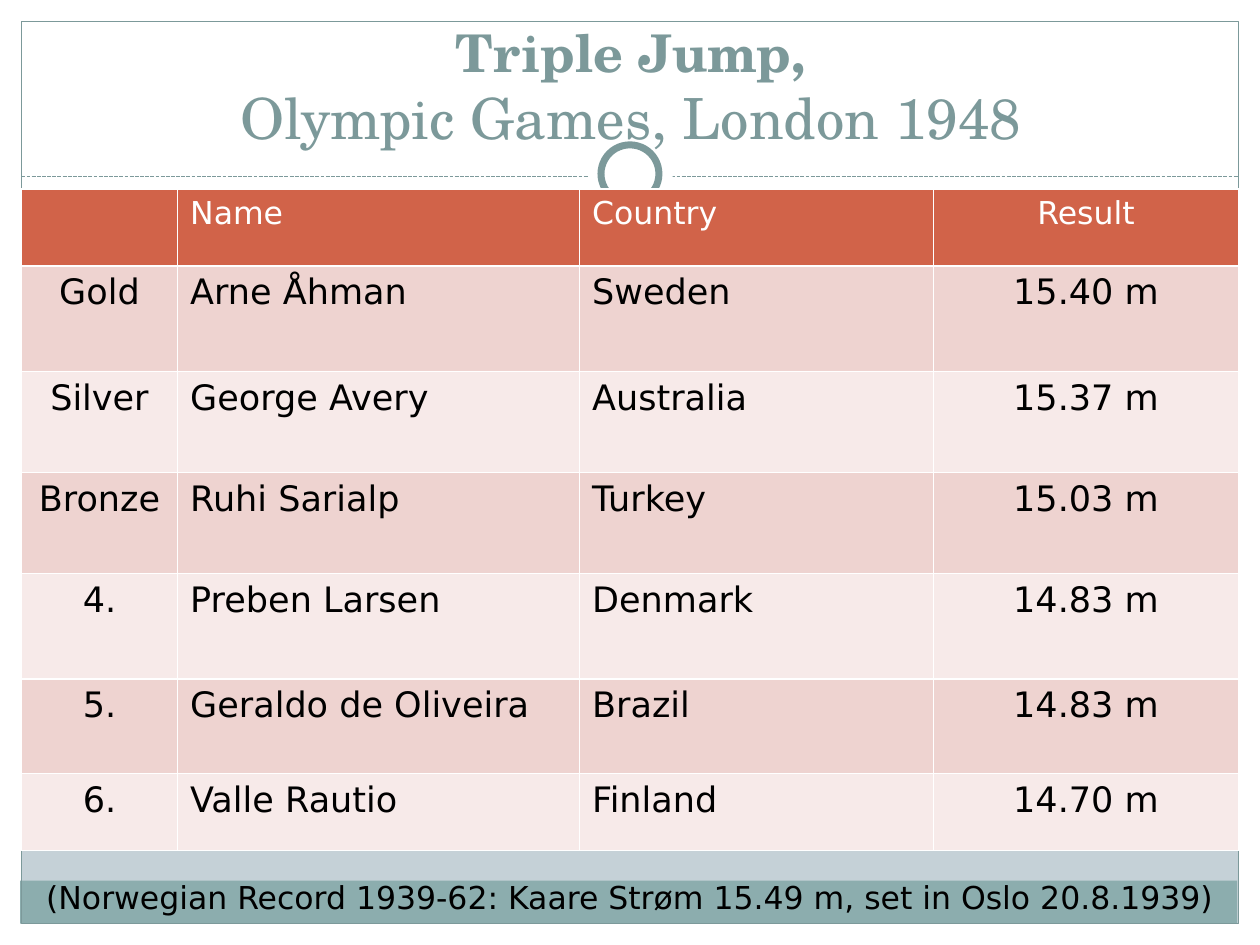
from lxml import etree
from pptx import Presentation
from pptx.dml.color import RGBColor
from pptx.enum import dml, shapes, text
from pptx.oxml.ns import qn
from pptx.util import Inches, Pt

WHITE, TEAL, BLACK = "FFFFFF", "7C999A", "000000"
BODY_FONT, TITLE_FONT = "DejaVu Sans", "TeX Gyre Schola"


def color(hex_string):
    return RGBColor.from_string(hex_string)


def style_paragraph(paragraph, size, hex_string, font_name, centered):
    paragraph.alignment = text.PP_ALIGN.CENTER if centered else text.PP_ALIGN.LEFT
    for run in paragraph.runs:
        run.font.size = Pt(size)
        run.font.name = font_name
        run.font.bold = False
        run.font.color.rgb = color(hex_string)


presentation = Presentation()
presentation.slide_width, presentation.slide_height = Inches(10), Inches(7.5)
slide = presentation.slides.add_slide(presentation.slide_layouts[6])
slide.background.fill.solid()
slide.background.fill.fore_color.rgb = color("C5D1D7")

# Margins, footer band, frame and the ring on the divider
RECTANGLE, OVAL = shapes.MSO_SHAPE.RECTANGLE, shapes.MSO_SHAPE.OVAL
divider = None
for kind, box, fill, line_width in [
    (RECTANGLE, (0, 7.33, 10, 0.17), WHITE, 0),
    (RECTANGLE, (0, 0, 10, 1.52), WHITE, 0),
    (RECTANGLE, (0, 0, 0.17, 7.5), WHITE, 0),
    (RECTANGLE, (9.83, 0, 0.17, 7.5), WHITE, 0),
    (RECTANGLE, (0.16, 6.99, 9.66, 0.34), "8CADAE", 0),
    (RECTANGLE, (0.17, 0.17, 9.66, 7.16), None, 0.75),
    (OVAL, (4.67, 1.05, 0.67, 0.67), WHITE, 0),
    (OVAL, (4.77, 1.15, 0.46, 0.46), WHITE, 4),
]:
    if kind == OVAL and divider is None:
        divider = slide.shapes.add_connector(
            shapes.MSO_CONNECTOR.STRAIGHT, Inches(0.17), Inches(1.4), Inches(9.83), Inches(1.4))
        divider.line.color.rgb = color(TEAL)
        divider.line.width = Pt(0.75)
        divider.line.dash_style = dml.MSO_LINE.SQUARE_DOT
        etree.SubElement(divider._element.spPr, qn("a:effectLst"))
    shape = slide.shapes.add_shape(kind, *map(Inches, box))
    shape.shadow.inherit = False
    if fill:
        shape.fill.solid()
        shape.fill.fore_color.rgb = color(fill)
    else:
        shape.fill.background()
    if line_width:
        shape.line.color.rgb = color(TEAL)
        shape.line.width = Pt(line_width)
    else:
        shape.line.fill.background()

# Title
title = slide.shapes.add_textbox(Inches(0.17), Inches(0.17), Inches(9.67), Inches(1.08))
title.text_frame.word_wrap = True
title.text_frame.vertical_anchor = text.MSO_ANCHOR.BOTTOM
paragraph = title.text_frame.paragraphs[0]
paragraph.text = "Triple Jump,\vOlympic Games, London 1948"
style_paragraph(paragraph, 32.4, TEAL, TITLE_FONT, True)
paragraph.runs[0].font.size = Pt(29.7)
paragraph.runs[0].font.bold = True

# Results table
results = [
    ("", "Name", "Country", "Result"),
    ("Gold", "Arne Åhman", "Sweden", "15.40 m"),
    ("Silver", "George Avery", "Australia", "15.37 m"),
    ("Bronze", "Ruhi Sarialp", "Turkey", "15.03 m"),
    ("4.", "Preben Larsen", "Denmark", "14.83 m"),
    ("5.", "Geraldo de Oliveira", "Brazil", "14.83 m"),
    ("6.", "Valle Rautio", "Finland", "14.70 m"),
]
column_widths = [1.24, 3.19, 2.81, 2.42]
row_heights = [0.61, 0.84, 0.8, 0.8, 0.84, 0.75, 0.61]
table = slide.shapes.add_table(
    len(results), len(column_widths), Inches(0.17), Inches(1.5), Inches(9.67), Inches(5.25)).table
for column, width in zip(table.columns, column_widths):
    column.width = Inches(width)
for row_index, (row, height) in enumerate(zip(results, row_heights)):
    table.rows[row_index].height = Inches(height)
    header = row_index == 0
    row_fill = "D16349" if header else ("F7EAE9", "EED3D0")[row_index % 2]
    for column_index, value in enumerate(row):
        cell = table.cell(row_index, column_index)
        cell.text = value
        style_paragraph(cell.text_frame.paragraphs[0], 18 if header else 20,
                        WHITE if header else BLACK, BODY_FONT, column_index in (0, 3))
        properties = cell._tc.get_or_add_tcPr()
        for side in ("a:lnL", "a:lnR", "a:lnT", "a:lnB"):
            border = etree.SubElement(properties, qn(side), w=str(Pt(1)))
            border_fill = etree.SubElement(border, qn("a:solidFill"))
            etree.SubElement(border_fill, qn("a:srgbClr"), val=WHITE)
        cell.fill.solid()
        cell.fill.fore_color.rgb = color(row_fill)

# Record note
note = slide.shapes.add_textbox(Inches(0.25), Inches(6.92), Inches(9.5), Inches(0.4))
note.text_frame.word_wrap = True
note.text_frame.auto_size = text.MSO_AUTO_SIZE.SHAPE_TO_FIT_TEXT
paragraph = note.text_frame.paragraphs[0]
paragraph.text = "(Norwegian Record 1939-62: Kaare Strøm 15.49 m, set in Oslo 20.8.1939)"
style_paragraph(paragraph, 18, BLACK, BODY_FONT, True)

presentation.save("out.pptx")
